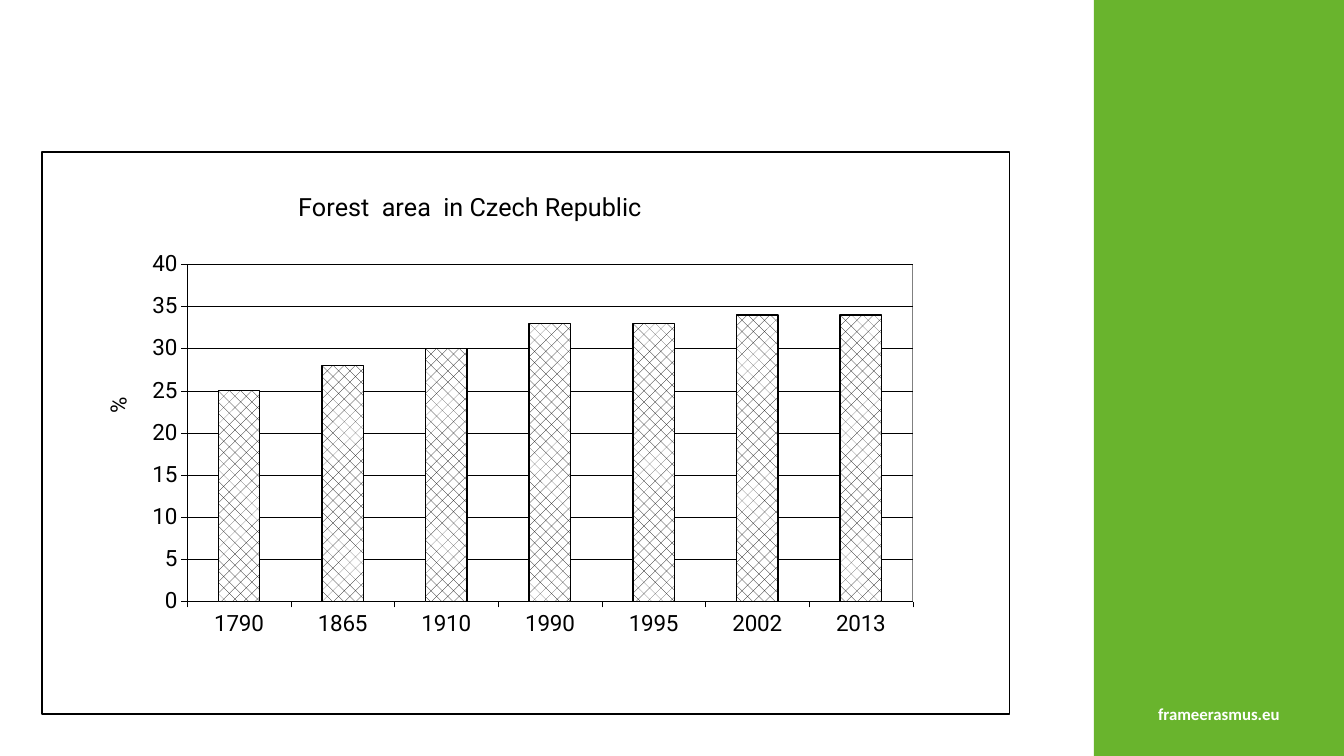
import pptx
import pptx.chart.data
import pptx.dml.color
import pptx.enum.chart
import pptx.enum.dml
import pptx.enum.shapes
import pptx.enum.text
import pptx.oxml
import pptx.oxml.ns
import pptx.util
from pptx.util import Inches

BLACK, WHITE, GREEN, GREY = "000000", "FFFFFF", "69B42D", "808080"
FOREST_SHARE = {"1790": 25, "1865": 28, "1910": 30, "1990": 33,
                "1995": 33, "2002": 34, "2013": 34}


def color(value):
    """Turn a hex string into a colour."""
    return pptx.dml.color.RGBColor.from_string(value)


def style_font(font, name, size, hex_color, bold=False):
    """Set the face, size, colour and weight of a font."""
    font.name = name
    font.size = pptx.util.Pt(size)
    font.bold = bold
    font.color.rgb = color(hex_color)


def style_line(line, hex_color, width):
    """Set the colour and width of a line."""
    line.color.rgb = color(hex_color)
    line.width = pptx.util.Pt(width)


def add_band(page, left, top, width, height):
    """Add the plain green side band."""
    band = page.shapes.add_shape(
        pptx.enum.shapes.MSO_SHAPE.RECTANGLE, left, top, width, height)
    band.shadow.inherit = False
    band.fill.solid()
    band.fill.fore_color.rgb = color(GREEN)
    band.line.fill.background()


def add_label(page, text, left, top, width, height):
    """Add a centred bold white label."""
    box = page.shapes.add_textbox(left, top, width, height)
    box.text_frame.word_wrap = True
    para = box.text_frame.paragraphs[0]
    para.alignment = pptx.enum.text.PP_ALIGN.CENTER
    span = para.add_run()
    span.text = text
    style_font(span.font, "Calibri", 12, WHITE, bold=True)


def place(element, index, inner=False, **fractions):
    """Give a chart part a manual layout in fractions of the chart."""
    for old in element.findall(pptx.oxml.ns.qn("c:layout")):
        element.remove(old)
    target = '<c:layoutTarget val="inner"/>' if inner else ""
    modes = '<c:xMode val="edge"/><c:yMode val="edge"/>'
    sizes = "".join(f'<c:{key} val="{value}"/>' for key, value in fractions.items())
    element.insert(index, pptx.oxml.parse_xml(
        f'<c:layout {pptx.oxml.ns.nsdecls("c")}><c:manualLayout>'
        f'{target}{modes}{sizes}</c:manualLayout></c:layout>'))


def frame_properties(fill, hex_color, width):
    """Build the fill and border of a chart area."""
    inside = f'<a:solidFill><a:srgbClr val="{fill}"/></a:solidFill>' if fill else "<a:noFill/>"
    return pptx.oxml.parse_xml(
        f'<c:spPr {pptx.oxml.ns.nsdecls("c", "a")}>{inside}'
        f'<a:ln w="{pptx.util.Pt(width)}"><a:solidFill><a:srgbClr val="{hex_color}"/>'
        '</a:solidFill></a:ln></c:spPr>')


def set_title(title, text, size, x, y):
    """Write a chart or axis title and put it in place."""
    para = title.text_frame.paragraphs[0]
    span = para.add_run()
    span.text = text
    style_font(span.font, "Roboto", size, BLACK)
    place(title._element, 1, x=x, y=y)


def style_axes(chart):
    """Style both axes, the gridlines and the value title."""
    for axis in (chart.category_axis, chart.value_axis):
        axis.major_tick_mark = pptx.enum.chart.XL_TICK_MARK.OUTSIDE
        axis.minor_tick_mark = pptx.enum.chart.XL_TICK_MARK.NONE
        style_line(axis.format.line, BLACK, 0.25)
    values = chart.value_axis
    values.minimum_scale, values.maximum_scale, values.major_unit = 0, 40, 5
    values.has_major_gridlines = True
    style_line(values.major_gridlines.format.line, BLACK, 0.25)
    set_title(values.axis_title, "%", 16, 0.06, 0.43)
    body = values.axis_title.text_frame._txBody.bodyPr
    body.set("rot", "-5400000")
    body.set("vert", "horz")


def add_forest_chart(page, left, top, width, height):
    """Add the column chart of forest area."""
    data = pptx.chart.data.CategoryChartData()
    data.categories = list(FOREST_SHARE)
    data.add_series("Series 1", list(FOREST_SHARE.values()))
    chart = page.shapes.add_chart(
        pptx.enum.chart.XL_CHART_TYPE.COLUMN_CLUSTERED,
        left, top, width, height, data).chart
    style_font(chart.font, "Roboto", 16, BLACK)
    chart.has_legend = False
    set_title(chart.chart_title, "Forest  area  in Czech Republic", 18, 0.26, 0.06)
    style_axes(chart)
    plot = chart.plots[0]
    plot.gap_width = 150
    plot.vary_by_categories = False
    columns = plot.series[0].format
    columns.fill.patterned()
    columns.fill.pattern = pptx.enum.dml.MSO_PATTERN.PERCENT_25
    columns.fill.fore_color.rgb = color(BLACK)
    columns.fill.back_color.rgb = color(WHITE)
    style_line(columns.line, BLACK, 1)
    chart_element = chart._chartSpace.chart
    plot_area = chart_element.plotArea
    place(plot_area, 0, inner=True, x=0.15, y=0.2, w=0.75, h=0.6)
    plot_area.append(frame_properties(None, GREY, 0.5))
    chart_element.addnext(frame_properties(WHITE, BLACK, 1))


def main():
    """Build and save the forest area slide."""
    deck = pptx.Presentation()
    deck.slide_width, deck.slide_height = Inches(13.33), Inches(7.5)
    page = deck.slides.add_slide(deck.slide_layouts[6])
    add_band(page, Inches(10.85), Inches(0), Inches(2.48), Inches(7.5))
    add_label(page, "frameerasmus.eu", Inches(10.85), Inches(6.93), Inches(2.48), Inches(0.3))
    add_forest_chart(page, Inches(0.41), Inches(1.5), Inches(9.61), Inches(5.59))
    deck.save("out.pptx")


if __name__ == "__main__":
    main()
